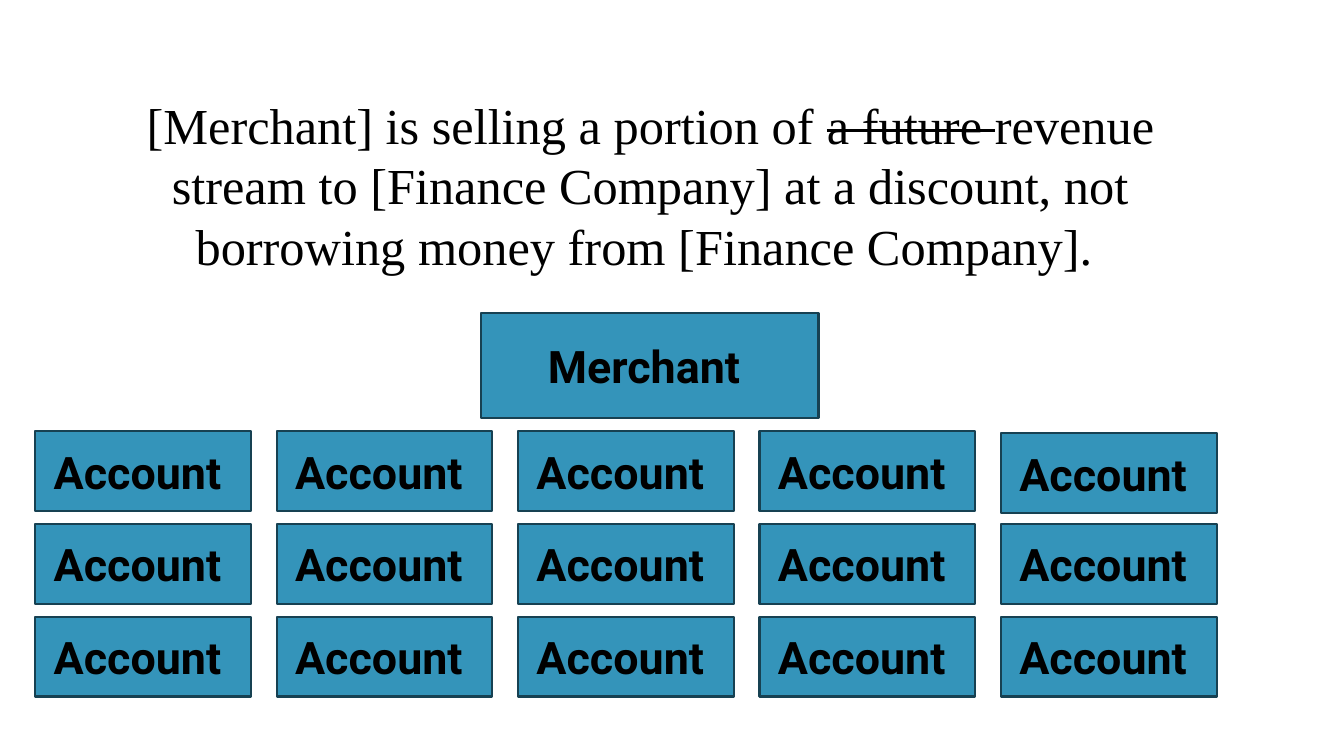
from itertools import product

from pptx import Presentation
from pptx.dml.color import RGBColor
from pptx.enum.shapes import MSO_SHAPE
from pptx.enum.text import MSO_ANCHOR, PP_ALIGN
from pptx.util import Inches, Pt

RECTANGLE = MSO_SHAPE.RECTANGLE
CENTER = PP_ALIGN.CENTER
TOP, MIDDLE = MSO_ANCHOR.TOP, MSO_ANCHOR.MIDDLE

SLIDE_COLUMNS, SLIDE_ROWS = 160, 90
CELLS_PER_INCH = 12

STATEMENT = [
    ("[Merchant] is selling a portion of ", False),
    ("a future ", True),
    ("revenue stream to [Finance Company] at a discount, not "
     "borrowing money from [Finance Company]. ", False),
]
STATEMENT_FORMAT = {"name": "Times New Roman", "size": Pt(36)}
LABEL_FORMAT = {"name": "Roboto", "size": Pt(32), "bold": True}

ACCOUNT_COLUMNS, ACCOUNT_ROWS = 5, 3
ACCOUNT_LEFT, ACCOUNT_TOP = 4.2, 51.36
ACCOUNT_STEP_X, ACCOUNT_STEP_Y = 28.74, 11.04
ACCOUNT_WIDTH, ACCOUNT_HEIGHT = 25.68, 9.48
LAST_COLUMN_DROP = 0.24


def color(hex_code):
    return RGBColor.from_string(hex_code)


def grid(*cells):
    """Convert grid columns and rows to slide lengths."""
    return [Inches(cell / CELLS_PER_INCH) for cell in cells]


class SlideBuilder:
    fill = "3494BA"
    outline = "174152"
    outline_width = Pt(1.5)
    ink = "000000"

    def __init__(self, deck):
        self.slide = deck.slides.add_slide(deck.slide_layouts[6])

    def set_text(self, frame, spans, font_format, anchor):
        """Fill a frame with one centred paragraph of (text, struck) spans."""
        frame.word_wrap = True
        frame.vertical_anchor = anchor
        para = frame.paragraphs[0]
        para.alignment = CENTER
        for text, struck in spans:
            span = para.add_run()
            span.text = text
            for name, value in font_format.items():
                setattr(span.font, name, value)
            span.font.color.rgb = color(self.ink)
            if struck:
                span._r.get_or_add_rPr().set("strike", "sngStrike")

    def text(self, left, top, width, height, spans):
        box = self.slide.shapes.add_textbox(*grid(left, top, width, height))
        self.set_text(box.text_frame, spans, STATEMENT_FORMAT, TOP)

    def block(self, left, top, width, height, label):
        box = self.slide.shapes.add_shape(RECTANGLE, *grid(left, top, width, height))
        box.shadow.inherit = False
        box.fill.solid()
        box.fill.fore_color.rgb = color(self.fill)
        box.line.color.rgb = color(self.outline)
        box.line.width = self.outline_width
        self.set_text(box.text_frame, [(label, False)], LABEL_FORMAT, MIDDLE)


def main():
    deck = Presentation()
    deck.slide_width, deck.slide_height = grid(SLIDE_COLUMNS, SLIDE_ROWS)
    page = SlideBuilder(deck)
    page.text(10, 10.56, 134.88, 23.04, STATEMENT)
    page.block(57.24, 37.32, 40.2, 12.48, "Merchant ")
    for column, row in product(range(ACCOUNT_COLUMNS), range(ACCOUNT_ROWS)):
        top_right = column == ACCOUNT_COLUMNS - 1 and row == 0
        drop = LAST_COLUMN_DROP if top_right else 0
        page.block(ACCOUNT_LEFT + column * ACCOUNT_STEP_X,
                   ACCOUNT_TOP + row * ACCOUNT_STEP_Y + drop,
                   ACCOUNT_WIDTH, ACCOUNT_HEIGHT, "Account ")
    deck.save("out.pptx")


if __name__ == "__main__":
    main()
